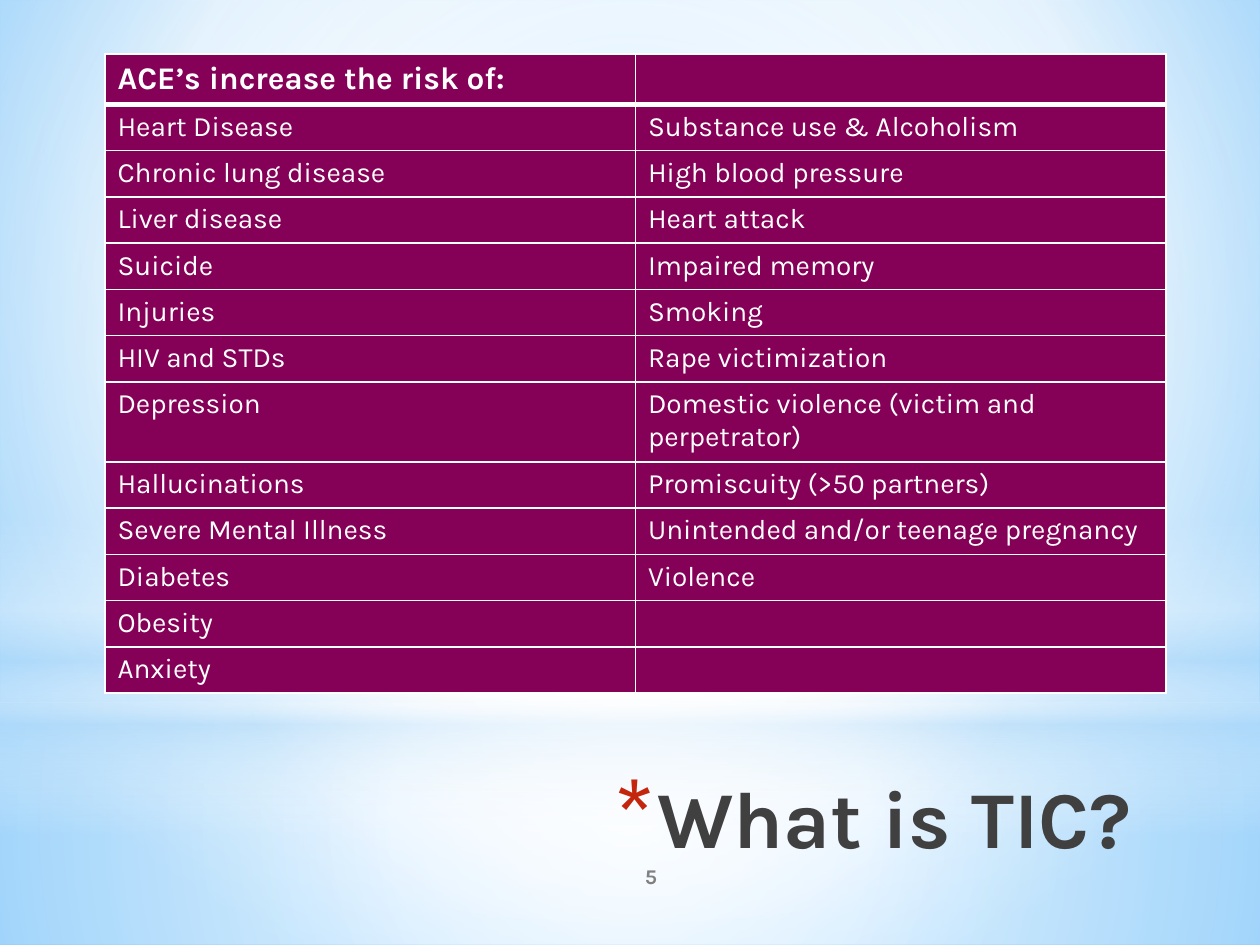
from dataclasses import dataclass

from lxml.etree import SubElement
from pptx import Presentation
from pptx.dml.color import RGBColor
from pptx.enum.shapes import MSO_SHAPE
from pptx.enum.text import MSO_ANCHOR, MSO_AUTO_SIZE, PP_ALIGN
from pptx.oxml.ns import qn
from pptx.util import Pt

EMU_PER_PX = 914400 / 126


@dataclass(frozen=True)
class Theme:
    font: str = "Karla"
    white: str = "FFFFFF"
    sky: str = "B4DCFA"
    plum: str = "850057"
    title: str = "404040"
    bullet: str = "C3260C"
    number: str = "808080"
    title_size: int = 46
    header_size: int = 18
    body_size: int = 16
    number_size: int = 12


THEME = Theme()

BACKGROUND_STOPS = [(0, "9ED5FF", 100), (60, THEME.white, 100), (100, "5BB9FF", 100)]
CENTRE = (50, 50, 50, 50)
GLOWS = [
    (MSO_SHAPE.RECTANGLE, (0, 703, 1260, 242), CENTRE,
     [(0, THEME.white, 91), (37, THEME.white, 76), (100, THEME.sky, 79)]),
    (MSO_SHAPE.RECTANGLE, (0, 0, 1260, 703), CENTRE,
     [(0, THEME.white, 89), (48, THEME.white, 62), (100, THEME.sky, 79)]),
    (MSO_SHAPE.RECTANGLE, (0, 519, 1260, 315), None,
     [(0, THEME.white, 0), (29, THEME.white, 30), (45, THEME.sky, 40),
      (55, THEME.white, 26), (65, THEME.sky, 60), (100, THEME.white, 0)]),
    (MSO_SHAPE.OVAL, (0, 220, 1260, 703), CENTRE,
     [(0, THEME.white, 100), (56, THEME.white, 0)]),
]

RISKS = [
    ("ACE’s increase the risk of:", ""),
    ("Heart Disease", "Substance use & Alcoholism"),
    ("Chronic lung disease", "High blood pressure"),
    ("Liver disease", "Heart attack"),
    ("Suicide", "Impaired memory"),
    ("Injuries", "Smoking"),
    ("HIV and STDs", "Rape victimization"),
    ("Depression", "Domestic violence (victim and perpetrator)"),
    ("Hallucinations", "Promiscuity (>50 partners)"),
    ("Severe Mental Illness", "Unintended and/or teenage pregnancy"),
    ("Diabetes", "Violence"),
    ("Obesity", ""),
    ("Anxiety", ""),
]
HEADER_HEIGHT, ROW_HEIGHT, TALL_HEIGHT, TALL_ROW = 50, 46, 80, 7


def px(length):
    return round(length * EMU_PER_PX)


def set_values(target, values):
    for name, value in values.items():
        setattr(target, name, value)


def add_child(parent, tag, **attributes):
    return SubElement(parent, qn(tag), {name: str(value) for name, value in attributes.items()})


def place(shape, box):
    set_values(shape, dict(zip(("left", "top", "width", "height"), map(px, box))))


def format_text(paragraph, size, color, bold=False, align=PP_ALIGN.LEFT):
    paragraph.alignment = align
    set_values(paragraph.font, {"name": THEME.font, "size": Pt(size), "bold": bold})
    paragraph.font.color.rgb = RGBColor.from_string(color)
    for run in paragraph.runs:
        set_values(run.font, {"name": THEME.font, "size": Pt(size), "bold": bold})
        run.font.color.rgb = RGBColor.from_string(color)


def paint_gradient(fill, properties, stops, centre):
    fill.solid()
    solid = properties.find(qn("a:solidFill"))
    gradient = add_child(properties, "a:gradFill", rotWithShape=1)
    properties.replace(solid, gradient)
    stop_list = add_child(gradient, "a:gsLst")
    for position, color, opacity in stops:
        stop = add_child(stop_list, "a:gs", pos=position * 1000)
        shade = add_child(stop, "a:srgbClr", val=color)
        add_child(shade, "a:alpha", val=opacity * 1000)
    if centre:
        route = add_child(gradient, "a:path", path="circle")
        add_child(route, "a:fillToRect", **{side: inset * 1000 for side, inset in zip("ltrb", centre)})
    else:
        add_child(gradient, "a:lin", ang=5400000, scaled=0)


def add_backdrop(slide):
    fill = slide.background.fill
    fill.solid()
    properties = next(slide.element.iter(qn("p:bgPr")))
    paint_gradient(fill, properties, BACKGROUND_STOPS, (20, 10, 20, 60))
    for preset, box, centre, stops in GLOWS:
        glow = slide.shapes.add_shape(preset, *map(px, box))
        glow.shadow.inherit = False
        glow.line.fill.background()
        paint_gradient(glow.fill, glow.element.spPr, stops, centre)


def add_title(slide, box):
    title = slide.shapes.title
    slide.shapes.element.append(title.element)
    place(title, box)
    title.text = "What is TIC?"
    set_values(title.text_frame, {
        "vertical_anchor": MSO_ANCHOR.TOP, "auto_size": MSO_AUTO_SIZE.NONE, "word_wrap": True,
    })
    paragraph = title.text_frame.paragraphs[0]
    format_text(paragraph, THEME.title_size, THEME.title, True, PP_ALIGN.RIGHT)
    properties = paragraph.runs[0].font
    properties = paragraph.runs[0]._r.getparent().get_or_add_pPr()
    properties.set("marL", str(px(44)))
    properties.set("indent", str(px(-44)))
    bullet = [
        add_child(properties, "a:buClr"),
        add_child(properties, "a:buSzPct", val=128000),
        add_child(properties, "a:buFont", typeface=THEME.font),
        add_child(properties, "a:buChar", char="*"),
    ]
    add_child(bullet[0], "a:srgbClr", val=THEME.bullet)
    defaults = properties.find(qn("a:defRPr"))
    properties.append(defaults)


def add_number(slide, box):
    number = slide.shapes.add_textbox(*map(px, box))
    set_values(number.text_frame, {
        "text": "5", "word_wrap": True, "vertical_anchor": MSO_ANCHOR.MIDDLE,
    })
    format_text(number.text_frame.paragraphs[0], THEME.number_size, THEME.number, True, PP_ALIGN.CENTER)


def add_borders(cell, widths):
    properties = cell._tc.get_or_add_tcPr()
    for side, width in widths.items():
        line = add_child(properties, f"a:ln{side}", w=Pt(width))
        add_child(add_child(line, "a:solidFill"), "a:srgbClr", val=THEME.white)


def add_risk_table(slide, box):
    table = slide.shapes.add_table(len(RISKS), 2, *map(px, box)).table
    table.horz_banding = False
    for column in table.columns:
        column.width = px(box[2] / 2)
    for index, texts in enumerate(RISKS):
        header = index == 0
        height = HEADER_HEIGHT if header else TALL_HEIGHT if index == TALL_ROW else ROW_HEIGHT
        table.rows[index].height = px(height)
        size = THEME.header_size if header else THEME.body_size
        for cell, text in zip(table.rows[index].cells, texts):
            cell.text = text
            format_text(cell.text_frame.paragraphs[0], size, THEME.white, header)
            add_borders(cell, {"L": 1, "R": 1, "T": 3 if index == 1 else 1, "B": 3 if header else 1})
            cell.fill.solid()
            cell.fill.fore_color.rgb = RGBColor.from_string(THEME.plum)


def main():
    presentation = Presentation()
    set_values(presentation, {"slide_width": px(1260), "slide_height": px(945)})
    slide = presentation.slides.add_slide(presentation.slide_layouts[5])
    add_backdrop(slide)
    add_title(slide, (247, 762, 897, 130))
    add_number(slide, (525, 851, 252, 50))
    add_risk_table(slide, (105, 54, 1061, 638))
    presentation.save("out.pptx")


if __name__ == "__main__":
    main()
